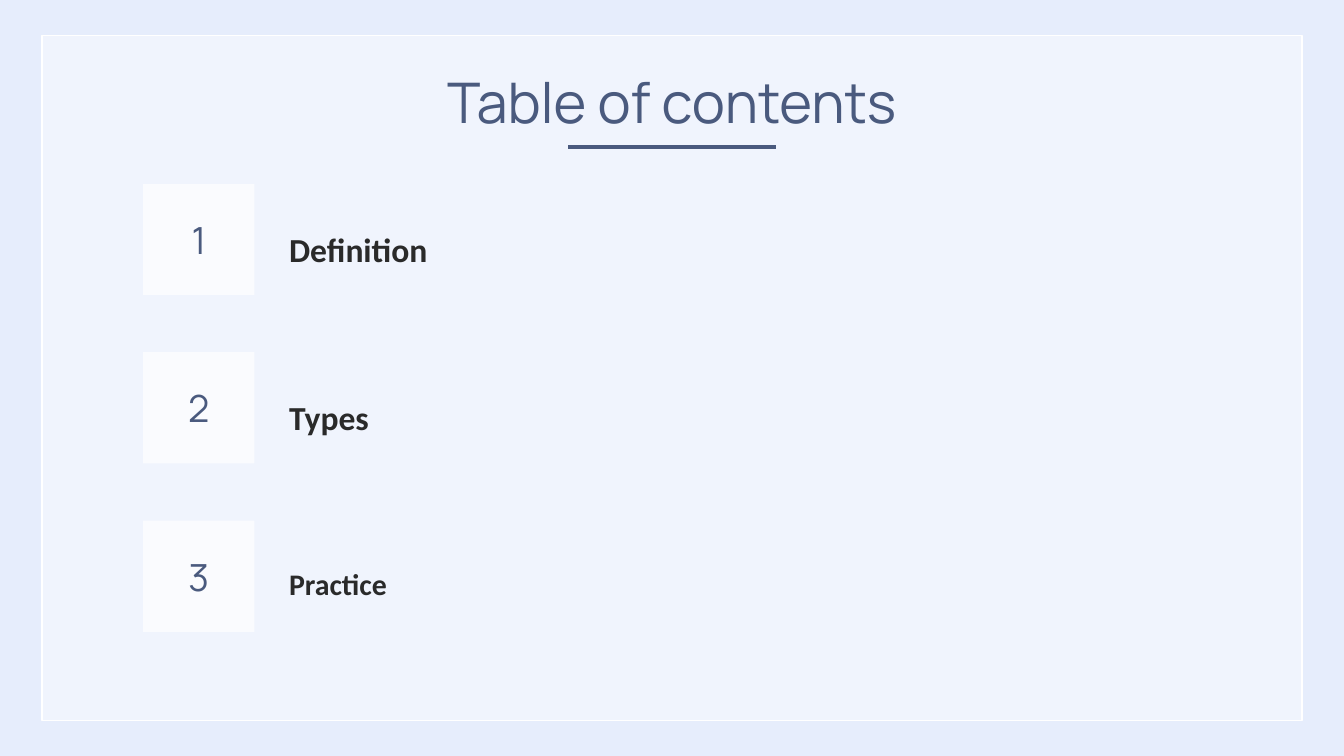
from lxml import etree
from pptx import Presentation
from pptx.dml.color import RGBColor
from pptx.enum import shapes, text
from pptx.oxml.ns import qn
from pptx.util import Pt

TITLE = "Table of contents"
SECTIONS = [("Definition", 18), ("Types", 18), ("Practice", 16)]  # label, size
COLORS = {"page": "E6EDFC", "white": "FFFFFF", "accent": "4A5A7E", "label": "2A2A2A"}

WIDTH, HEIGHT = 720, 405
TILE_LEFT, TILE_TOP, TILE_SIZE, TILE_STEP = 76.7, 98.5, 59.6, 90.2
LABEL_LEFT, LABEL_OFFSET = 147.8, 17
RULE_WIDTH, RULE_TOP = 111, 78.7


def color(name):
    return RGBColor.from_string(COLORS[name])


def add_panel(page, left, top, width, height, opacity):
    panel = page.shapes.add_shape(shapes.MSO_SHAPE.RECTANGLE,
                                  Pt(left), Pt(top), Pt(width), Pt(height))
    panel.shadow.inherit = False
    panel.fill.solid()
    panel.fill.fore_color.rgb = color("white")
    fill_color = panel.fill._xPr.find(qn("a:solidFill"))[0]
    etree.SubElement(fill_color, qn("a:alpha")).set("val", str(opacity * 1000))
    panel.line.fill.background()
    return panel


def add_text_box(page, left, top, width, height):
    return page.shapes.add_textbox(Pt(left), Pt(top), Pt(width), Pt(height))


def write(box, words, *, size, font="Manrope", ink="accent", bold=False,
          align=text.PP_ALIGN.CENTER, anchor=text.MSO_ANCHOR.TOP):
    frame = box.text_frame
    frame.word_wrap = True
    frame.vertical_anchor = anchor
    frame.margin_left = frame.margin_right = Pt(7.2)
    frame.margin_top = frame.margin_bottom = Pt(7.2)
    para = frame.paragraphs[0]
    para.alignment = align
    span = para.add_run()
    span.text = words
    span.font.name = font
    span.font.size = Pt(size)
    span.font.bold = bold
    span.font.color.rgb = color(ink)


deck = Presentation()
deck.slide_width, deck.slide_height = Pt(WIDTH), Pt(HEIGHT)
page = deck.slides.add_slide(deck.slide_layouts[6])
page.background.fill.solid()
page.background.fill.fore_color.rgb = color("page")

# Framed background panel
frame_panel = add_panel(page, 22.5, 19, 675, 367, opacity=44)
frame_panel.line.color.rgb = color("white")
frame_panel.line.width = Pt(0.75)

# Title and the rule under it
write(add_text_box(page, 56.7, 28.8, 606.6, 43.2), TITLE, size=30)
rule_left = (WIDTH - RULE_WIDTH) / 2
rule = page.shapes.add_connector(shapes.MSO_CONNECTOR.STRAIGHT, Pt(rule_left), Pt(RULE_TOP),
                                 Pt(rule_left + RULE_WIDTH), Pt(RULE_TOP))
rule.line.color.rgb = color("accent")
rule.line.width = Pt(2.25)
etree.SubElement(rule._element.spPr, qn("a:effectLst"))

# Numbered tiles with their section labels
for index, (label, size) in enumerate(SECTIONS):
    top = TILE_TOP + index * TILE_STEP
    tile = add_panel(page, TILE_LEFT, top, TILE_SIZE, TILE_SIZE, opacity=71)
    write(tile, str(index + 1), size=20, anchor=text.MSO_ANCHOR.MIDDLE)
    write(add_text_box(page, LABEL_LEFT, top + LABEL_OFFSET, 189.4, 43.2), label, size=size,
          font="Calibri", ink="label", bold=True, align=text.PP_ALIGN.LEFT)

deck.save("out.pptx")
